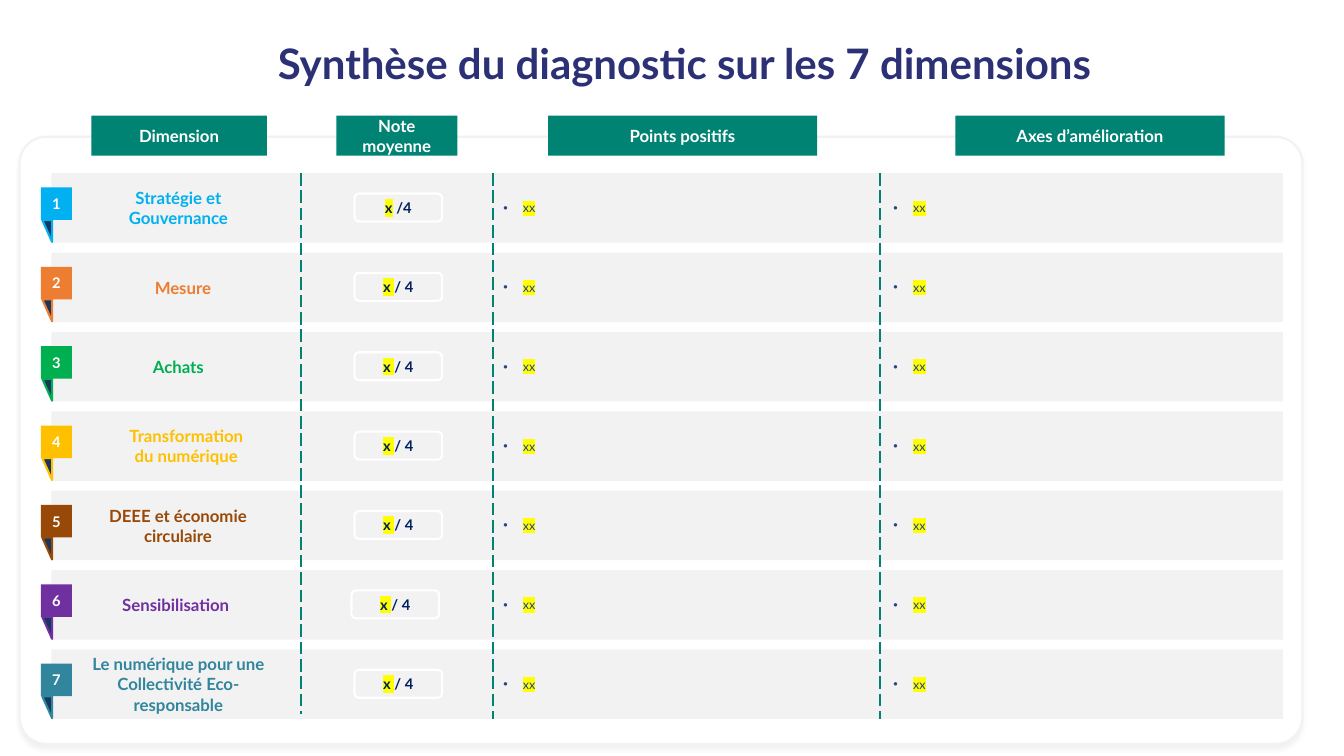
from dataclasses import dataclass

from lxml import etree
from pptx import Presentation
from pptx.dml.color import RGBColor
from pptx.enum.dml import MSO_LINE
from pptx.enum.shapes import MSO_CONNECTOR, MSO_SHAPE
from pptx.enum.text import MSO_ANCHOR, PP_ALIGN
from pptx.oxml import parse_xml
from pptx.oxml.ns import nsdecls, qn
from pptx.util import Inches, Pt

RECTANGLE = MSO_SHAPE.RECTANGLE
ROUNDED = MSO_SHAPE.ROUNDED_RECTANGLE
TRIANGLE = MSO_SHAPE.ISOSCELES_TRIANGLE
STRAIGHT = MSO_CONNECTOR.STRAIGHT
LONG_DASH = MSO_LINE.LONG_DASH
TOP, MIDDLE = MSO_ANCHOR.TOP, MSO_ANCHOR.MIDDLE
CENTER, JUSTIFY = PP_ALIGN.CENTER, PP_ALIGN.JUSTIFY


@dataclass(frozen=True)
class Theme:
    font: str = "Lato"
    title: str = "2C3176"
    green: str = "008373"
    band: str = "F2F2F2"
    white: str = "FFFFFF"
    fold: str = "17375E"
    score: str = "002060"
    body: str = "294289"
    highlight: str = "FFFF00"
    title_size: int = 40
    label_size: int = 16
    badge_size: int = 14
    body_size: int = 12


theme = Theme()


def add_block(kind, left, top, width, height, fill, line=None):
    block = page.shapes.add_shape(
        kind, Inches(left), Inches(top), Inches(width), Inches(height))
    block.shadow.inherit = False
    block.fill.solid()
    block.fill.fore_color.rgb = RGBColor.from_string(fill)
    if line:
        block.line.color.rgb = RGBColor.from_string(line)
        block.line.width = Pt(2)
    else:
        block.line.fill.background()
    return block


def write(box, spans, size, color, bold=True, align=CENTER, anchor=MIDDLE):
    frame = box.text_frame
    frame.word_wrap = True
    frame.vertical_anchor = anchor
    para = frame.paragraphs[0]
    para.alignment = align
    for text, marked in spans:
        span = para.add_run()
        span.text = text
        if marked:
            span.font._element.append(parse_xml(
                f'<a:highlight {nsdecls("a")}><a:srgbClr val="{theme.highlight}"/></a:highlight>'))
    para.font.name = theme.font
    para.font.size = Pt(size)
    para.font.bold = bold
    para.font.color.rgb = RGBColor.from_string(color)


deck = Presentation()
deck.slide_width = Inches(17.78)
deck.slide_height = Inches(10)
page = deck.slides.add_slide(deck.slide_layouts[5])

panel = add_block(ROUNDED, 0.26, 1.81, 16.97, 8.03, theme.white, theme.band)
panel.adjustments[0] = 0.044
effects = panel._element.spPr.find(qn("a:effectLst"))
effects.append(parse_xml(
    f'<a:outerShdw {nsdecls("a")} blurRad="{Pt(4)}" dist="{Pt(3)}" dir="5400000">'
    '<a:srgbClr val="000000"><a:alpha val="6000"/></a:srgbClr></a:outerShdw>'))

title = page.shapes.title
title.left, title.top = Inches(2.24), Inches(0.5)
title.width, title.height = Inches(13.63), Inches(0.67)
frame = title.text_frame
frame.margin_left = frame.margin_right = frame.margin_top = frame.margin_bottom = 0
write(title, [("Synthèse du diagnostic sur les 7 dimensions", False)],
      theme.title_size, theme.title, anchor=TOP)

headers = [
    ("Dimension", 1.21, 2.32),
    ("Note moyenne", 4.45, 1.6),
    ("Points positifs", 7.25, 3.56),
    ("Axes d’amélioration", 12.64, 3.56),
]
for text, left, width in headers:
    header = add_block(RECTANGLE, left, 1.53, width, 0.53, theme.green)
    write(header, [(text, False)], theme.label_size, theme.white)

first_top, row_step, row_height = 2.29, 1.05, 0.92
plain_score = [("x ", True), ("/ 4", False)]
dimensions = [
    ("Stratégie et Gouvernance", "00B0F0", 1.1, 2.52, 4.69, [("x", True), (" /4", False)]),
    ("Mesure", "ED7D31", 1.67, 1.5, 4.69, plain_score),
    ("Achats", "00B050", 1, 2.72, 4.69, plain_score),
    ("Transformation du numérique", "FFC000", 1.55, 1.83, 4.69, plain_score),
    ("DEEE et économie circulaire", "984807", 1.06, 2.59, 4.69, plain_score),
    ("Sensibilisation", "7030A0", 1.46, 1.73, 4.65, plain_score),
    ("Le numérique pour une Collectivité Eco-responsable", "31859C", 1.1, 2.52, 4.69, plain_score),
]
for index, (name, color, left, width, score_left, score) in enumerate(dimensions):
    top = first_top + index * row_step
    add_block(RECTANGLE, 0.68, top, 16.29, row_height, theme.band)

    fold = add_block(TRIANGLE, 0.48, top + 0.7, 0.29, 0.13, theme.fold, color)
    fold.adjustments[0] = 1
    fold.rotation = 270
    badge = add_block(RECTANGLE, 0.54, top + 0.19, 0.41, 0.43, color)
    write(badge, [(str(index + 1), False)], theme.badge_size, theme.white)

    label = page.shapes.add_textbox(
        Inches(left), Inches(top), Inches(width), Inches(row_height))
    write(label, [(name, False)], theme.label_size, color)

    pill = add_block(ROUNDED, score_left, top + 0.27, 1.16, 0.37, theme.band, theme.white)
    write(pill, score, theme.badge_size, theme.score)

    for list_left, list_width in [(6.56, 5), (11.72, 5.12)]:
        points = page.shapes.add_textbox(
            Inches(list_left), Inches(top + 0.07), Inches(list_width), Inches(0.78))
        properties = points.text_frame.paragraphs[0]._p.get_or_add_pPr()
        properties.set("marL", str(Inches(0.26)))
        properties.set("indent", str(-Inches(0.26)))
        etree.SubElement(properties, qn("a:buFont"), typeface="Arial")
        etree.SubElement(properties, qn("a:buChar"), char="•")
        write(points, [("xx", True)], theme.body_size, theme.body, bold=False, align=JUSTIFY)

for left, bottom in [(3.98, 9.44), (6.52, 9.51), (11.64, 9.51)]:
    divider = page.shapes.add_connector(
        STRAIGHT, Inches(left), Inches(first_top), Inches(left), Inches(bottom))
    divider.line.color.rgb = RGBColor.from_string(theme.green)
    divider.line.width = Pt(1.5)
    divider.line.dash_style = LONG_DASH
    etree.SubElement(divider._element.spPr, qn("a:effectLst"))

deck.save("out.pptx")
